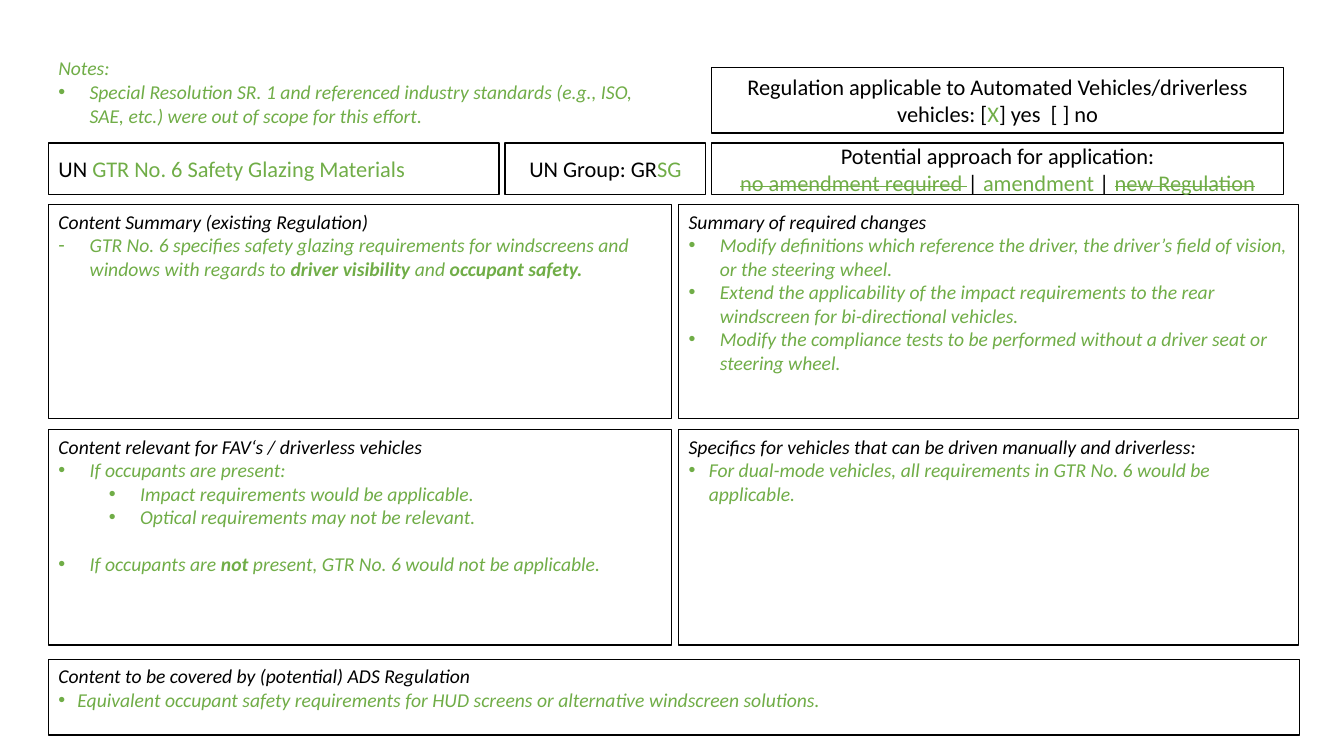
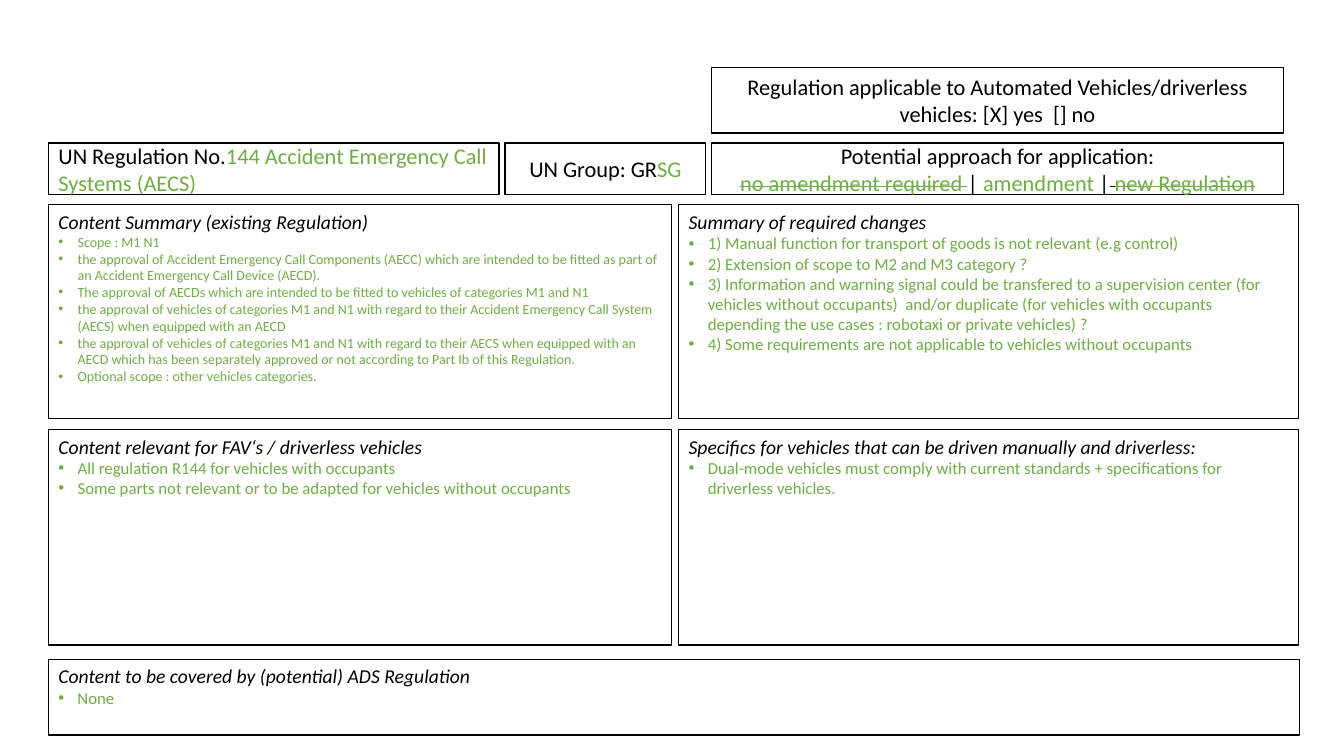
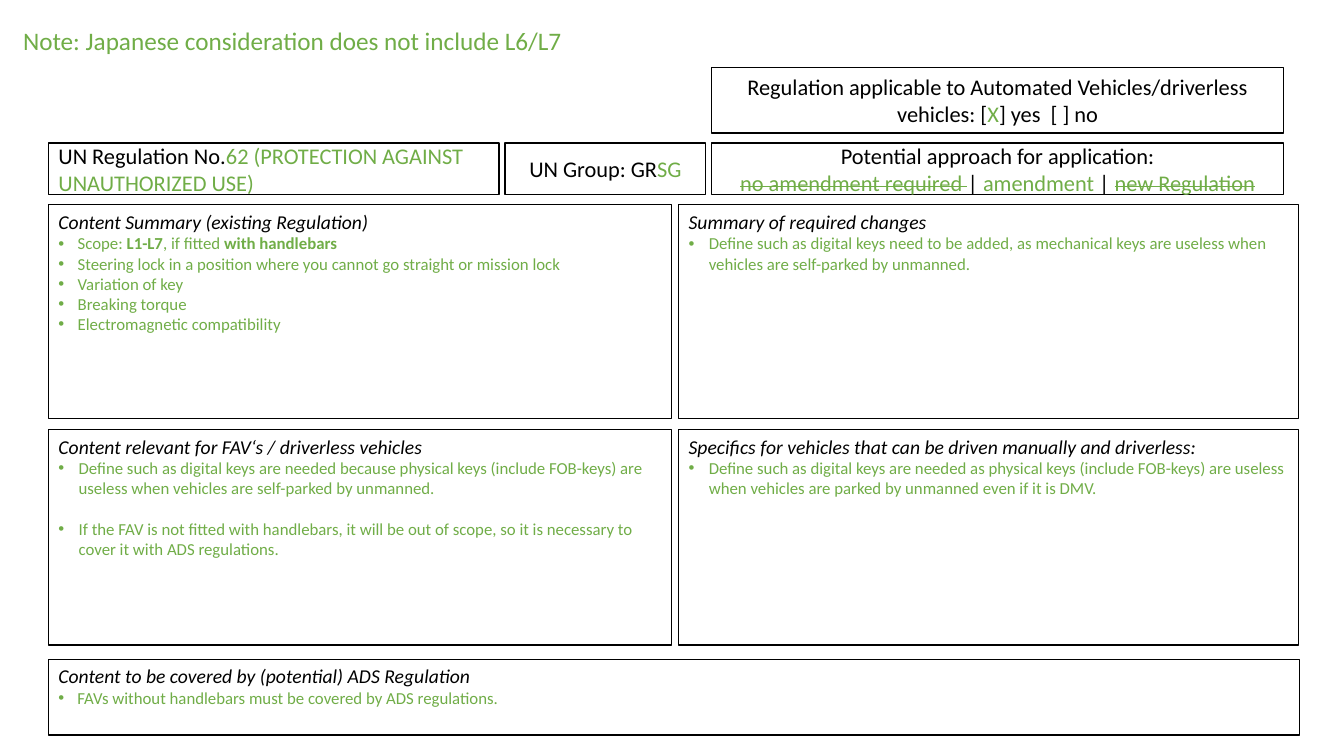
from collections import namedtuple

from lxml import etree
from pptx import Presentation
from pptx.dml.color import RGBColor
from pptx.enum.shapes import MSO_SHAPE
from pptx.enum.text import MSO_ANCHOR, MSO_AUTO_SIZE, PP_ALIGN
from pptx.oxml.ns import qn
from pptx.util import Inches, Pt

RECTANGLE = MSO_SHAPE.RECTANGLE
TOP, MIDDLE = MSO_ANCHOR.TOP, MSO_ANCHOR.MIDDLE
LEFT, CENTER = PP_ALIGN.LEFT, PP_ALIGN.CENTER
NO_AUTOFIT = MSO_AUTO_SIZE.NONE

BLACK = RGBColor(0x00, 0x00, 0x00)
WHITE = RGBColor(0xFF, 0xFF, 0xFF)
GREEN = RGBColor(0x70, 0xAD, 0x47)
FONT = "Calibri"
BOX_SIZE, HEADING_SIZE = 16, 14
COMPARISON_LAYOUT = 4

# Left, top, width, height in inches
TITLE_AREA = (0.48, 1.42, 4.47, 0.51)
GROUP_AREA = (5.01, 1.42, 1.99, 0.51)
APPROACH_AREA = (7.06, 1.42, 5.67, 0.51)
APPLICABLE_AREA = (7.06, 0.67, 5.67, 0.65)
PANELS = [
    ("Content Summary (existing Regulation)", (0.48, 2.03, 6.18, 2.12)),
    ("Content relevant for FAV‘s / driverless vehicles", (0.48, 4.26, 6.18, 2.14)),
    ("Summary of required changes", (6.73, 2.03, 6.15, 2.12)),
    ("Specifics for vehicles that can be driven manually and driverless:",
     (6.73, 4.26, 6.15, 2.14)),
    ("Content to be covered by (potential) ADS Regulation", (0.48, 6.54, 12.41, 0.75)),
]

# A run is (text, style words); in a bullet, ** switches bold on and off
Bullet = namedtuple("Bullet", "text level space_before", defaults=(0, 0))
BulletList = namedtuple("BulletList", "bullets size indent italic symbol",
                        defaults=(12, 0.19, False, "•"))
Note = namedtuple("Note", "area heading size italic wrap bullet_list")
Regulation = namedtuple("Regulation", "title applicable separator lists note")

GROUP = [("UN Group: GR", ""), ("SG", "green")]
APPLICABLE_TEXT = "Regulation applicable to Automated Vehicles/driverless vehicles: ["
APPLICABLE_YES = [(APPLICABLE_TEXT, ""), ("X", "green"), ("] yes  [ ] no", "")]
APPROACH_START = [("no amendment required ", "green strike"), ("| ", ""),
                  ("amendment", "green")]
APPROACH_END = [("new Regulation", "green strike")]

REGULATIONS = [
    Regulation(
        title=[("UN ", ""), ("GTR No. 6 Safety Glazing Materials", "green")],
        applicable=APPLICABLE_YES,
        separator=[(" | ", "")],
        lists=[
            BulletList([
                Bullet("GTR No. 6 specifies safety glazing requirements for windscreens and "
                       "windows with regards to **driver visibility** and "
                       "**occupant safety.**"),
            ], 14, 0.31, True, "-"),
            BulletList([
                Bullet("If occupants are present:"),
                Bullet("Impact requirements would be applicable.", 1),
                Bullet("Optical requirements may not be relevant.", 1),
                Bullet("If occupants are **not** present, GTR No. 6 would not be applicable.",
                       0, 17),
            ], 14, 0.31, True),
            BulletList([
                Bullet("Modify definitions which reference the driver, the driver’s field of "
                       "vision, or the steering wheel."),
                Bullet("Extend the applicability of the impact requirements to the rear "
                       "windscreen for bi-directional vehicles."),
                Bullet("Modify the compliance tests to be performed without a driver seat or "
                       "steering wheel."),
            ], 14, 0.31, True),
            BulletList([
                Bullet("For dual-mode vehicles, all requirements in GTR No. 6 would be "
                       "applicable."),
            ], 14, 0.2, True),
            BulletList([
                Bullet("Equivalent occupant safety requirements for HUD screens or alternative "
                       "windscreen solutions."),
            ], 14, 0.19, True),
        ],
        note=Note((0.48, 0.51, 6.03, 0.81), "Notes:", 14, True, True, BulletList([
            Bullet("Special Resolution SR. 1 and referenced industry standards (e.g., ISO, "
                   "SAE, etc.) were out of scope for this effort."),
        ], 14, 0.31, True)),
    ),
    Regulation(
        title=[("UN Regulation No.", ""),
               ("144 Accident Emergency Call Systems (AECS)", "green")],
        applicable=[(APPLICABLE_TEXT + "X] yes  [] no", "")],
        separator=[(" |", ""), (" ", "strike")],
        lists=[
            BulletList([
                Bullet("Scope : M1 N1"),
                Bullet("the approval of Accident Emergency Call Components (AECC) which are "
                       "intended to be fitted as part of an Accident Emergency Call Device "
                       "(AECD)."),
                Bullet("The approval of AECDs which are intended to be fitted to vehicles of "
                       "categories M1 and N1"),
                Bullet("the approval of vehicles of categories M1 and N1 with regard to their "
                       "Accident Emergency Call System (AECS) when equipped with an AECD"),
                Bullet("the approval of vehicles of categories M1 and N1 with regard to their "
                       "AECS when equipped with an AECD which has been separately approved or "
                       "not according to Part Ib of this Regulation."),
                Bullet("Optional scope : other vehicles categories."),
            ], 10),
            BulletList([
                Bullet("All regulation R144 for vehicles with occupants"),
                Bullet("Some parts not relevant or to be adapted for vehicles without "
                       "occupants"),
            ]),
            BulletList([
                Bullet("1) Manual function for transport of goods is not relevant "
                       "(e.g control)"),
                Bullet("2) Extension of scope to M2 and M3 category ?"),
                Bullet("3) Information and warning signal could be transfered to a supervision "
                       "center (for vehicles without occupants)  and/or duplicate (for "
                       "vehicles with occupants depending the use cases : robotaxi or private "
                       "vehicles) ?"),
                Bullet("4) Some requirements are not applicable to vehicles without occupants"),
            ]),
            BulletList([
                Bullet("Dual-mode vehicles must comply with current standards + specifications "
                       "for driverless vehicles."),
            ]),
            BulletList([Bullet("None")]),
        ],
        note=None,
    ),
    Regulation(
        title=[("UN Regulation No.", ""),
               ("62 (PROTECTION AGAINST UNAUTHORIZED USE)", "green")],
        applicable=APPLICABLE_YES,
        separator=[(" | ", "")],
        lists=[
            BulletList([
                Bullet("Scope: **L1-L7**, if fitted **with handlebars**"),
                Bullet("Steering lock in a position where you cannot go straight or mission "
                       "lock"),
                Bullet("Variation of key"),
                Bullet("Breaking torque"),
                Bullet("Electromagnetic compatibility"),
            ]),
            BulletList([
                Bullet("Define such as digital keys are needed because physical keys (include "
                       "FOB-keys) are useless when vehicles are self-parked by unmanned."),
                Bullet("If the FAV is not fitted with handlebars, it will be out of scope, so "
                       "it is necessary to cover it with ADS regulations.", 0, 14.6),
            ], 12, 0.2),
            BulletList([
                Bullet("Define such as digital keys need to be added, as mechanical keys are "
                       "useless when vehicles are self-parked by unmanned."),
            ], 12, 0.2),
            BulletList([
                Bullet("Define such as digital keys are needed as physical keys (include "
                       "FOB-keys) are useless when vehicles are parked by unmanned even if it "
                       "is DMV."),
            ], 12, 0.2),
            BulletList([
                Bullet("FAVs without handlebars must be covered by ADS regulations."),
            ]),
        ],
        note=Note((0.13, 0.2, 6.15, 0.4),
                  "Note: Japanese consideration does not include L6/L7",
                  18, False, False, BulletList([])),
    ),
]


def add_runs(paragraph, runs, size, italic=False):
    for text, style in runs:
        run = paragraph.add_run()
        run.text = text
        run.font.name = FONT
        run.font.size = Pt(size)
        run.font.italic = italic
        run.font.bold = "bold" in style
        run.font.color.rgb = GREEN if "green" in style else BLACK
        if "strike" in style:
            run.font._element.set("strike", "sngStrike")


def add_list(text_frame, heading_runs, heading_size, heading_italic, bullet_list):
    """Write a heading without a bullet, then the green bullets below it."""
    text_frame.vertical_anchor = TOP
    heading = text_frame.paragraphs[0]
    heading.alignment = LEFT
    heading.space_before = Pt(0)
    properties = heading._p.get_or_add_pPr()
    properties.set("marL", "0")
    properties.set("indent", "0")
    etree.SubElement(properties, qn("a:buNone"))
    add_runs(heading, heading_runs, heading_size, heading_italic)

    for bullet in bullet_list.bullets:
        paragraph = text_frame.add_paragraph()
        paragraph.alignment = LEFT
        paragraph.level = bullet.level
        paragraph.space_before = Pt(bullet.space_before)
        properties = paragraph._p.get_or_add_pPr()
        properties.set("marL", str(Inches(bullet_list.indent + 0.5 * bullet.level)))
        properties.set("indent", str(-Inches(bullet_list.indent)))
        etree.SubElement(properties, qn("a:buFont"), typeface="Arial")
        etree.SubElement(properties, qn("a:buChar"), char=bullet_list.symbol)
        runs = [(text, "green bold" if index % 2 else "green")
                for index, text in enumerate(bullet.text.split("**")) if text]
        add_runs(paragraph, runs, bullet_list.size, bullet_list.italic)


presentation = Presentation()
presentation.slide_width = Inches(13.33)
presentation.slide_height = Inches(7.5)

for regulation in REGULATIONS:
    slide = presentation.slides.add_slide(presentation.slide_layouts[COMPARISON_LAYOUT])
    bodies = [shape for shape in slide.placeholders if shape != slide.shapes.title]
    boxes = []

    for index, (heading, area) in enumerate(PANELS):
        if index < len(bodies):
            panel = bodies[index]
        else:
            panel = slide.shapes.add_shape(RECTANGLE, *map(Inches, area))
        add_list(panel.text_frame, [(heading, "")], HEADING_SIZE, True,
                 regulation.lists[index])
        boxes.append((panel, area))

    approach = APPROACH_START + regulation.separator + APPROACH_END
    headers = [
        (TITLE_AREA, LEFT, [regulation.title]),
        (GROUP_AREA, CENTER, [GROUP]),
        (APPROACH_AREA, CENTER, [[("Potential approach for application:", "")], approach]),
        (APPLICABLE_AREA, CENTER, [regulation.applicable]),
    ]
    for area, alignment, lines in headers:
        if area == TITLE_AREA:
            header = slide.shapes.title
        else:
            header = slide.shapes.add_shape(RECTANGLE, *map(Inches, area))
        text_frame = header.text_frame
        text_frame.vertical_anchor = MIDDLE
        for index, runs in enumerate(lines):
            paragraph = text_frame.add_paragraph() if index else text_frame.paragraphs[0]
            paragraph.alignment = alignment
            add_runs(paragraph, runs, BOX_SIZE)
        boxes.append((header, area))

    for box, area in boxes:
        box.left, box.top, box.width, box.height = map(Inches, area)
        box.shadow.inherit = False
        box.fill.solid()
        box.fill.fore_color.rgb = WHITE
        box.line.color.rgb = BLACK
        box.line.width = Pt(1)
        box.text_frame.word_wrap = True
        box.text_frame.auto_size = NO_AUTOFIT

    if regulation.note:
        note = regulation.note
        text_box = slide.shapes.add_textbox(*map(Inches, note.area))
        text_box.text_frame.word_wrap = note.wrap
        add_list(text_box.text_frame, [(note.heading, "green")], note.size, note.italic,
                 note.bullet_list)

presentation.save("out.pptx")
